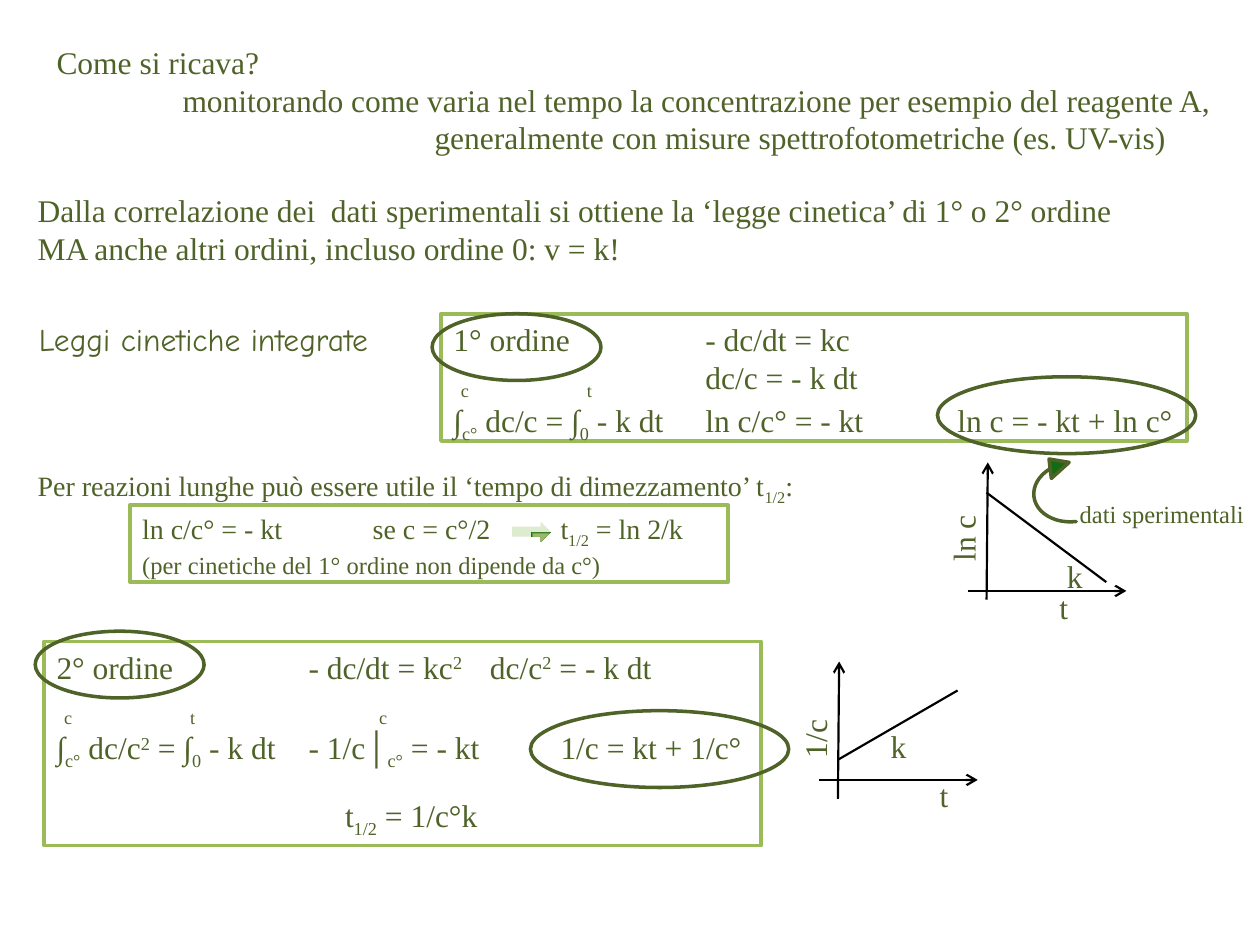
from dataclasses import dataclass

from lxml import etree
from pptx import Presentation
from pptx.dml.color import RGBColor
from pptx.enum.shapes import MSO_CONNECTOR, MSO_SHAPE
from pptx.enum.text import MSO_ANCHOR, PP_ALIGN
from pptx.oxml.ns import qn
from pptx.util import Inches, Pt

RECT, OVAL = MSO_SHAPE.RECTANGLE, MSO_SHAPE.OVAL
RIGHT_ARROW, CURVED_ARROW = MSO_SHAPE.RIGHT_ARROW, MSO_SHAPE.CURVED_RIGHT_ARROW
STRAIGHT = MSO_CONNECTOR.STRAIGHT
TOP, LEFT = MSO_ANCHOR.TOP, PP_ALIGN.LEFT
BASELINES = {"_": "-25000", "^": "30000"}


@dataclass(frozen=True)
class Theme:
    ink: str = "4F6228"
    frame: str = "9BBB59"
    axis: str = "000000"
    pale: str = "DDEBCF"
    leaf: str = "9CB86E"
    deep: str = "156B13"
    serif: str = "Times New Roman"
    hand: str = "Comic Neue"
    body: int = 18
    small: int = 16
    note: int = 14
    outline: float = 2
    thin: float = 1.25


@dataclass(frozen=True)
class Line:
    """A line of text: ~_x~ is subscript, ~^x~ superscript; tabs in inches."""
    text: str
    tabs: tuple = ()
    size: int = Theme.body
    font: str = Theme.serif


class Board:
    """Places elements on a grid of 100 columns and 75 rows."""

    def __init__(self, theme):
        self.theme = theme
        self.deck = Presentation()
        self.deck.slide_width, self.deck.slide_height = Inches(10), Inches(7.5)
        self.slide = self.deck.slides.add_slide(self.deck.slide_layouts[6])
        self.col = self.deck.slide_width / 100
        self.row = self.deck.slide_height / 75

    def place(self, x, y, w=0, h=0):
        return (round(x * self.col), round(y * self.row),
                round(w * self.col), round(h * self.row))

    def set_lines(self, shape, lines):
        frame = shape.text_frame
        frame.word_wrap = True
        frame.margin_right = 0
        frame.vertical_anchor = TOP
        for index, line in enumerate(lines):
            paragraph = frame.add_paragraph() if index else frame.paragraphs[0]
            paragraph.alignment = LEFT
            if line.tabs:
                stops = etree.SubElement(paragraph._p.get_or_add_pPr(), qn("a:tabLst"))
                for stop in line.tabs:
                    etree.SubElement(stops, qn("a:tab"), pos=str(Inches(stop)), algn="l")
            paragraph.font.size = Pt(line.size)
            paragraph.font.name = line.font
            paragraph.font.color.rgb = RGBColor.from_string(self.theme.ink)
            for part, piece in enumerate(line.text.split("~")):
                if not piece:
                    continue
                run = paragraph.add_run()
                run.text = piece[1:] if part % 2 else piece
                if part % 2:
                    run._r.get_or_add_rPr().set("baseline", BASELINES[piece[0]])

    def text(self, at, *lines, rotation=0):
        box = self.slide.shapes.add_textbox(*self.place(*at))
        box.rotation = rotation
        self.set_lines(box, lines)

    def shape(self, kind, at, line=None):
        shape = self.slide.shapes.add_shape(kind, *self.place(*at))
        shape.shadow.inherit = False
        shape.fill.background()
        if line:
            shape.line.color.rgb = RGBColor.from_string(line)
            shape.line.width = Pt(self.theme.outline)
        else:
            shape.line.fill.background()
        return shape

    def panel(self, at, *lines):
        self.set_lines(self.shape(RECT, at, self.theme.frame), lines)

    def ring(self, *at):
        self.shape(OVAL, at, self.theme.ink)

    def arrow(self, kind, at, stops, line=None):
        arrow = self.shape(kind, at, line)
        properties = arrow._element.spPr
        gradient = etree.Element(qn("a:gradFill"), rotWithShape="1")
        colours = etree.SubElement(gradient, qn("a:gsLst"))
        for share, colour in stops:
            stop = etree.SubElement(colours, qn("a:gs"), pos=str(share * 1000))
            etree.SubElement(stop, qn("a:srgbClr"), val=colour)
        spread = etree.SubElement(gradient, qn("a:path"), path="rect")
        etree.SubElement(spread, qn("a:fillToRect"), l="100000", t="100000")
        properties.replace(properties.find(qn("a:noFill")), gradient)
        return arrow

    def line(self, start, end, head=False):
        line = self.slide.shapes.add_connector(
            STRAIGHT, *self.place(*start)[:2], *self.place(*end)[:2])
        line.line.color.rgb = RGBColor.from_string(self.theme.axis)
        line.line.width = Pt(self.theme.thin)
        if head:
            outline = line._element.spPr.find(qn("a:ln"))
            etree.SubElement(outline, qn("a:tailEnd"), type="arrow")
        etree.SubElement(line._element.spPr, qn("a:effectLst"))

    def graph(self, x_axis, y_axis, trend, labels):
        self.line(*x_axis, head=True)
        self.line(*y_axis, head=True)
        self.line(*trend)
        for label, at, rotation in labels:
            self.text(at, Line(label), rotation=rotation)


def main():
    theme = Theme()
    board = Board(theme)

    # Introduction
    board.text((3.5, 2.9, 95.2, 10.1),
               Line("Come si ricava?"),
               Line("\tmonitorando come varia nel tempo la concentrazione "
                    "per esempio del reagente A,", (1,)),
               Line("\tgeneralmente con misure spettrofotometriche (es. UV-vis)", (3,)))
    board.text((2, 14.7, 88.9, 7.1),
               Line("Dalla correlazione dei  dati sperimentali si ottiene la "
                    "‘legge cinetica’ di 1° o 2° ordine"),
               Line("MA anche altri ordini, incluso ordine 0: v = k!"))
    board.text((2.1, 24.9, 31.4, 4), Line("Leggi cinetiche integrate", font=theme.hand))

    # First order
    board.panel((35, 24.9, 59.2, 10.1),
                Line("1° ordine\t- dc/dt = kc", (2,)),
                Line("\t~_c~\t~_t~\tdc/c = - k dt", (0.06, 1.06, 2)),
                Line("∫~_c°~ dc/c = ∫~_0~ - k dt\tln c/c° = - kt\tln c = - kt + ln c°",
                     (2, 4)))
    board.ring(34.3, 24.9, 13.4, 5.3)
    board.ring(74.4, 29.9, 20.5, 6.1)
    board.graph(((76.8, 46.9), (89.4, 46.9)), ((78.3, 47.6), (78.4, 36.7)),
                ((78.3, 39.1), (87.8, 46.2)),
                (("ln c", (73.6, 40.7, 5.7, 4), 270),
                 ("t", (83.1, 46.2, 2.7, 4), 0),
                 ("k", (83.7, 43.7, 3.3, 4), 0)))
    board.text((84.7, 39.1, 15.2, 3.4), Line("dati sperimentali", size=theme.note))
    data_arrow = board.arrow(
        CURVED_ARROW, (82, 36.1, 3.1, 5.5),
        ((99, theme.pale), (100, theme.leaf), (100, theme.deep)), theme.ink)
    data_arrow.rotation = 353.1
    data_arrow._element.spPr.find(qn("a:xfrm")).set("flipV", "1")
    for index, value in enumerate((0, 0.5, 0.5)):
        data_arrow.adjustments[index] = value

    # Half-life
    board.text((2, 36.7, 63.2, 3.7),
               Line("Per reazioni lunghe può essere utile il "
                    "‘tempo di dimezzamento’ t~_1/2~:", size=theme.small))
    board.panel((10.3, 40.1, 47.5, 6.1),
                Line("ln c/c° = - kt\tse c = c°/2\tt~_1/2~ = ln 2/k",
                     (1.83, 3.32), theme.small),
                Line("(per cinetiche del 1° ordine non dipende da c°)", size=theme.note))
    board.arrow(RIGHT_ARROW, (40.6, 41.4, 3.1, 1.6),
                ((76, theme.leaf), (98, theme.deep), (99, theme.pale)))

    # Second order
    board.panel((3.5, 50.9, 56.9, 16.2),
                Line("2° ordine\t- dc/dt = kc~^2~\tdc/c~^2~ = - k dt", (2, 3.44)),
                Line("\t~_c~\t~_t~\t~_c~", (0.06, 1.06, 2.56)),
                Line("∫~_c°~ dc/c~^2~ = ∫~_0~ - k dt\t- 1/c│~_c°~ = - kt"
                     "\t1/c = kt + 1/c°", (2, 4)))
    board.text((26.4, 62.7, 13.6, 4), Line("t~_1/2~ = 1/c°k"))
    board.ring(2.8, 50.1, 13.4, 5.3)
    board.ring(42.1, 56.4, 20.5, 6.1)
    board.graph(((65, 61.9), (77.6, 61.9)), ((66.5, 63.4), (66.6, 52.5)),
                ((66.5, 60.3), (76, 54.8)),
                (("1/c", (62.1, 56.6, 5.1, 4), 270),
                 ("t", (73.6, 61.1, 2.7, 4), 0),
                 ("k", (69.7, 57.2, 3.3, 4), 0)))

    board.deck.save("out.pptx")


if __name__ == "__main__":
    main()
